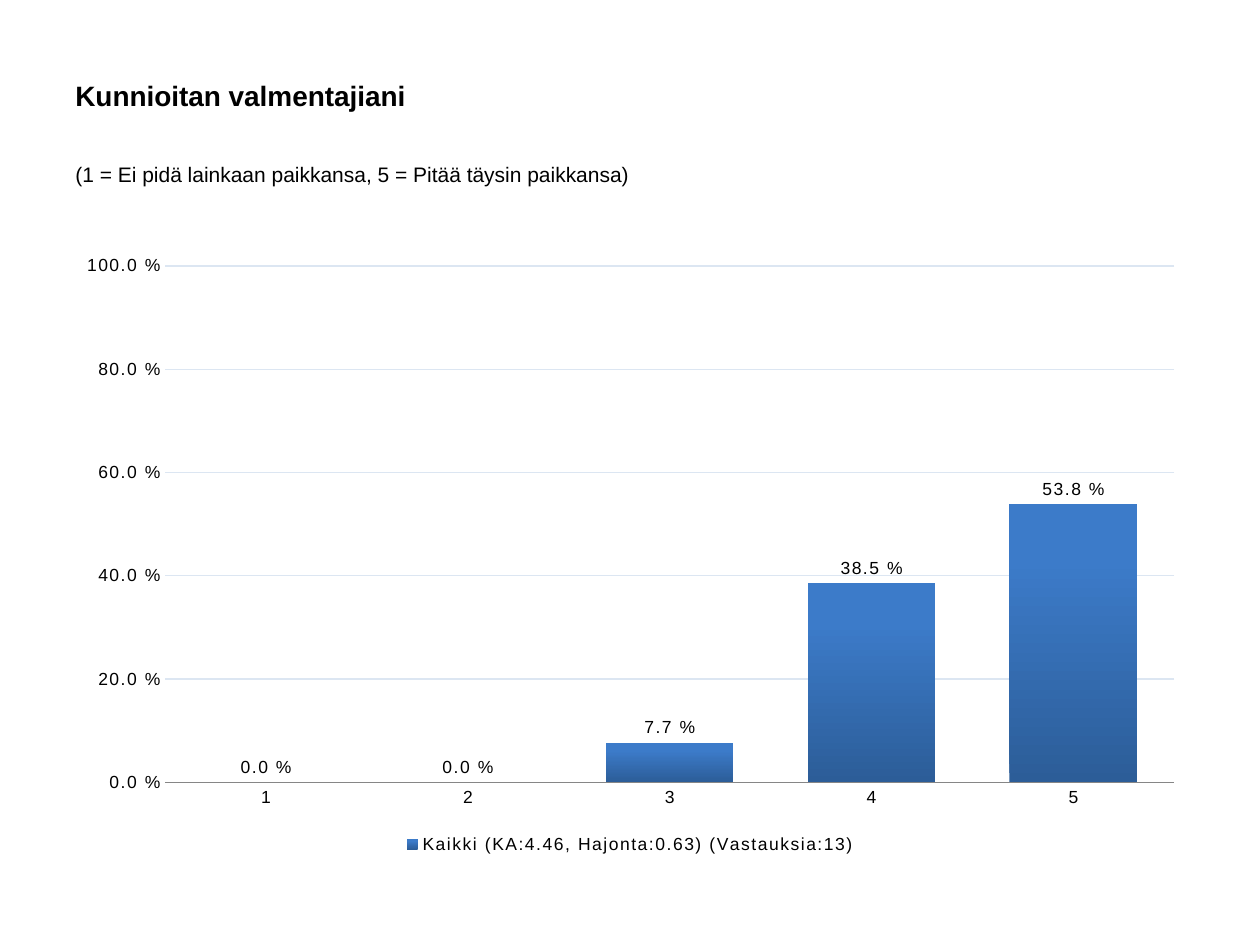
from dataclasses import dataclass

from pptx import Presentation
from pptx.chart.data import CategoryChartData as Data
from pptx.dml.color import RGBColor as Rgb
from pptx.enum.chart import XL_CHART_TYPE as Kind
from pptx.enum.chart import XL_LABEL_POSITION as Spot
from pptx.enum.chart import XL_LEGEND_POSITION as Side
from pptx.enum.chart import XL_TICK_MARK as Tick
from pptx.enum.text import MSO_ANCHOR as Anchor
from pptx.oxml import parse_xml
from pptx.oxml.ns import nsdecls, qn
from pptx.util import Inches, Pt


@dataclass(frozen=True)
class Theme:
    face: str = "Arial"
    ink: Rgb = Rgb(0, 0, 0)
    grid: Rgb = Rgb(0xDC, 0xE6, 0xF2)
    axis: Rgb = Rgb(0x86, 0x86, 0x86)
    low: Rgb = Rgb(0x2C, 0x5D, 0x98)
    high: Rgb = Rgb(0x3C, 0x7B, 0xC9)
    title: int = 16
    body: int = 12
    label: int = 10
    track: int = 100
    form: str = "0.0\\ %"


class Deck:
    def __init__(self, theme):
        self.theme = theme
        self.prs = Presentation()
        self.prs.slide_width, self.prs.slide_height = Inches(10), Inches(7.5)
        self.slide = self.prs.slides.add_slide(self.prs.slide_layouts[6])

    def style(self, font, size, bold=False):
        font.name, font.size, font.bold = self.theme.face, Pt(size), bold
        font.color.rgb = self.theme.ink

    def text(self, words, box, size, bold=False, anchor=Anchor.TOP, before=0):
        frame = self.slide.shapes.add_textbox(*map(Inches, box)).text_frame
        frame.word_wrap = True
        frame.vertical_anchor = anchor
        par = frame.paragraphs[0]
        par.text = words
        par.space_before = Pt(before)
        self.style(par.font, size, bold)

    def columns(self, box, cats, name, vals, area):
        look = self.theme
        data = Data(number_format=look.form)
        data.categories = cats
        data.add_series(name, vals)
        chart = self.slide.shapes.add_chart(
            Kind.COLUMN_CLUSTERED, *map(Inches, box), data).chart
        chart.has_title = False
        self.style(chart.font, look.label)
        self.legend(chart)
        self.axes(chart)
        self.bars(chart.plots[0])
        self.place(chart, area)
        for font in chart.element.iter(qn("a:defRPr")):
            font.set("spc", str(look.track))

    def legend(self, chart):
        chart.has_legend = True
        chart.legend.position = Side.BOTTOM
        chart.legend.include_in_layout = False
        self.style(chart.legend.font, self.theme.label)

    def axes(self, chart):
        look = self.theme
        cat, val = chart.category_axis, chart.value_axis
        for axis in (cat, val):
            axis.major_tick_mark = axis.minor_tick_mark = Tick.NONE
            self.style(axis.tick_labels.font, look.label)
        cat.format.line.color.rgb = look.axis
        cat.format.line.width = Pt(0.75)
        val.minimum_scale, val.maximum_scale, val.major_unit = 0, 1, 0.2
        val.tick_labels.number_format = look.form
        val.tick_labels.number_format_is_linked = False
        val.format.line.fill.background()
        line = val.major_gridlines.format.line
        line.color.rgb = look.grid
        line.width = Pt(0.75)

    def bars(self, plot):
        look = self.theme
        plot.gap_width = 58
        plot.vary_by_categories = False
        bar = plot.series[0]
        bar.invert_if_negative = False
        fill = bar.format.fill
        fill.gradient()
        fill.gradient_angle = 90
        for stop, tone, pos in zip(fill.gradient_stops, (look.low, look.high), (0, 0.8)):
            stop.color.rgb = tone
            stop.position = pos
        bar.format.line.fill.background()
        tags = bar.data_labels
        tags.show_value = True
        tags.position = Spot.OUTSIDE_END
        tags.number_format = look.form
        tags.number_format_is_linked = False
        self.style(tags.font, look.label)

    def place(self, chart, area):
        plot = chart.element.find(".//" + qn("c:plotArea"))
        for old in plot.findall(qn("c:layout")):
            plot.remove(old)
        modes = '<c:xMode val="edge"/><c:yMode val="edge"/>'
        sizes = "".join(f'<c:{key} val="{num}"/>' for key, num in zip("xywh", area))
        plot.insert(0, parse_xml(
            f'<c:layout {nsdecls("c")}><c:manualLayout>'
            f'<c:layoutTarget val="inner"/>{modes}{sizes}'
            '</c:manualLayout></c:layout>'))

    def save(self):
        self.prs.save("out.pptx")


def main():
    theme = Theme()
    deck = Deck(theme)
    deck.text("Kunnioitan valmentajiani", (0.5, 0.36, 9, 0.79),
              theme.title, bold=True, anchor=Anchor.MIDDLE)
    deck.text("(1 = Ei pidä lainkaan paikkansa, 5 = Pitää täysin paikkansa)",
              (0.5, 1.23, 9, 0.59), theme.body, before=2.4)
    deck.columns((0.5, 1.94, 9, 4.88), ["1", "2", "3", "4", "5"],
                 "Kaikki (KA:4.46, Hajonta:0.63) (Vastauksia:13)",
                 [0, 0, 0.077, 0.385, 0.538], (0.09, 0.035, 0.89, 0.84))
    deck.save()


if __name__ == "__main__":
    main()
